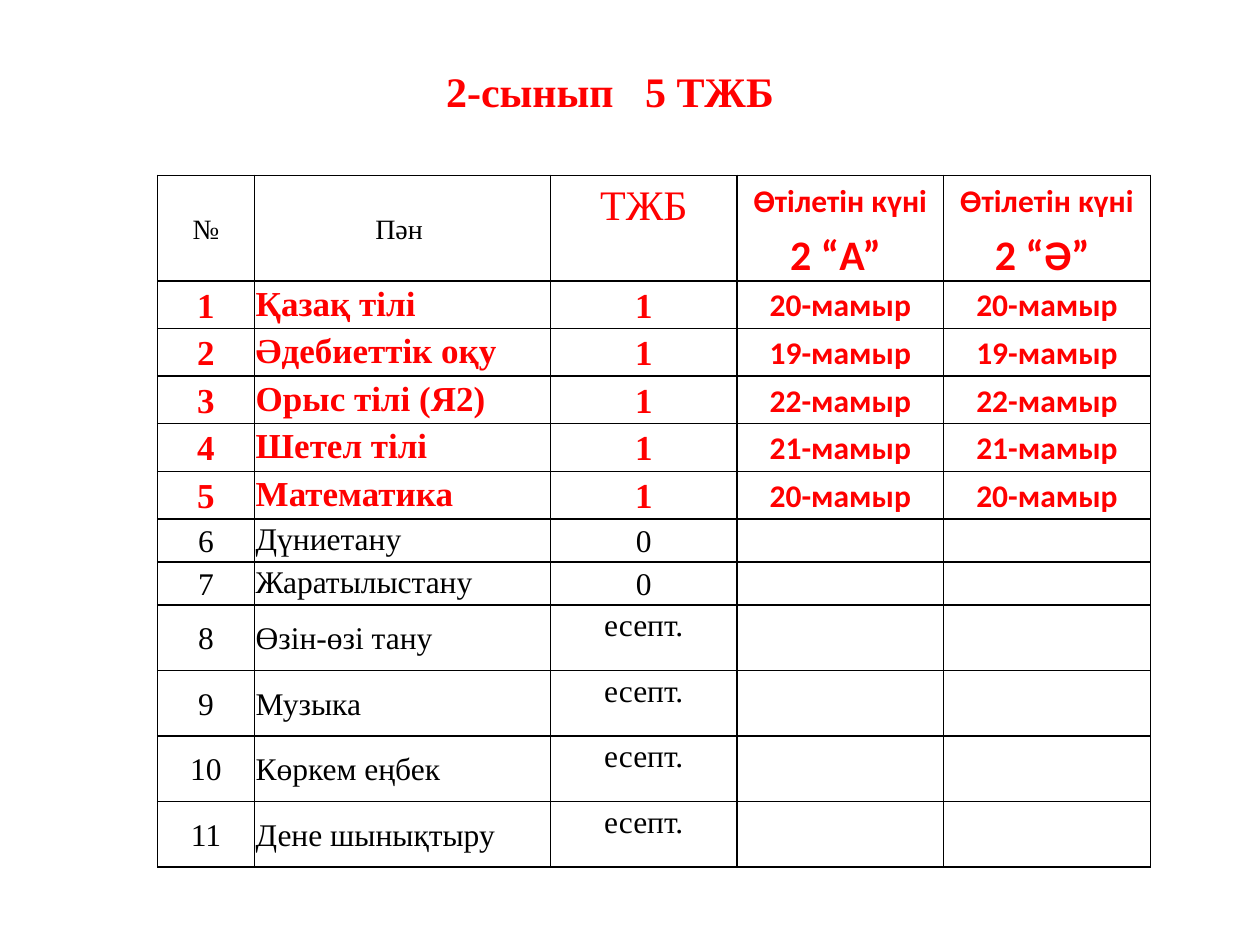
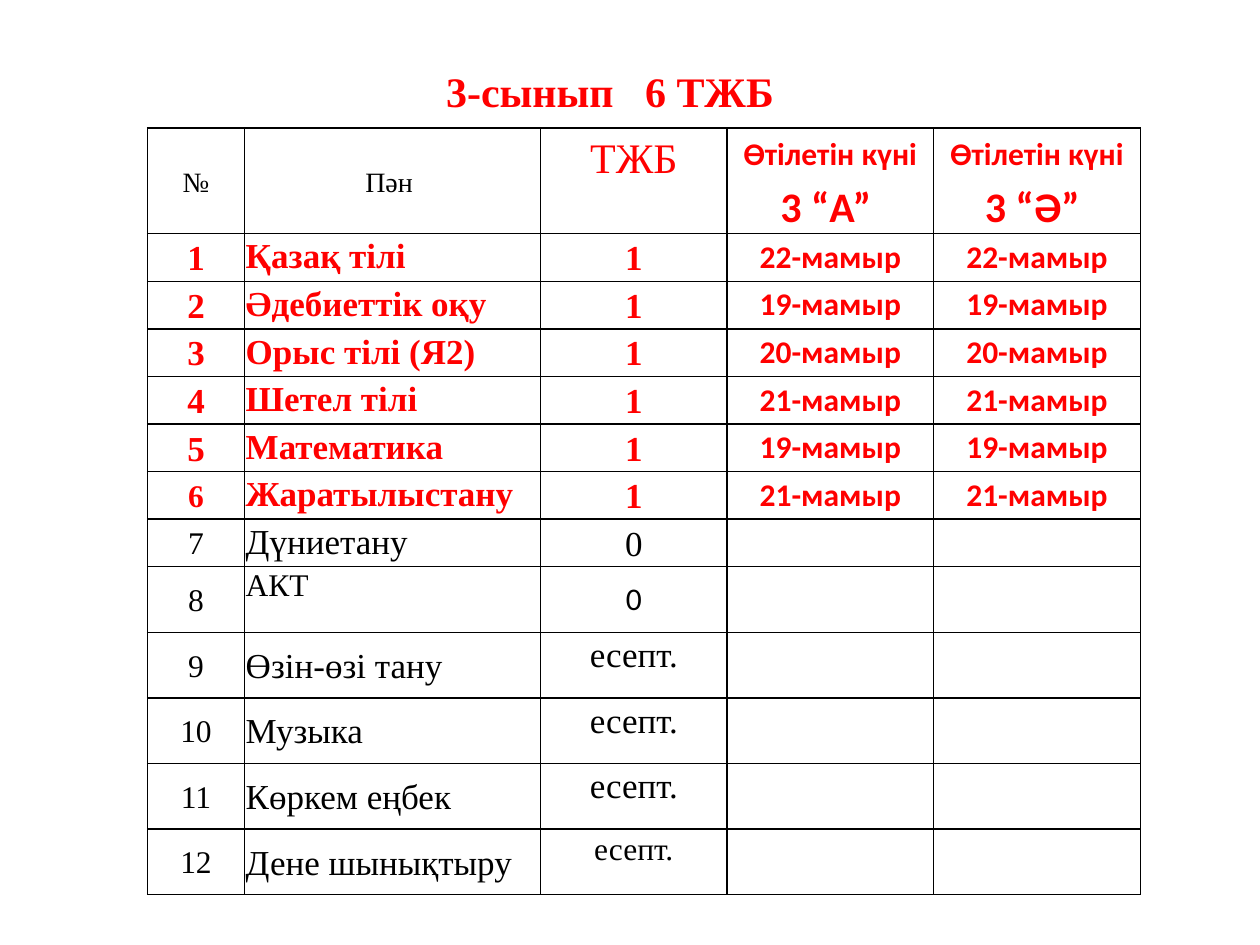
from dataclasses import dataclass, replace

from lxml import etree
from pptx import Presentation
from pptx.dml.color import RGBColor
from pptx.enum.text import MSO_ANCHOR, MSO_AUTO_SIZE, PP_ALIGN
from pptx.oxml.ns import qn
from pptx.util import Pt

LEFT, CENTER, BOTH = PP_ALIGN.LEFT, PP_ALIGN.CENTER, PP_ALIGN.JUSTIFY
TOP, MIDDLE = MSO_ANCHOR.TOP, MSO_ANCHOR.MIDDLE
NO_FIT, GROW = MSO_AUTO_SIZE.NONE, MSO_AUTO_SIZE.SHAPE_TO_FIT_TEXT
RED = RGBColor(0xFF, 0x00, 0x00)
BLACK = RGBColor(0x00, 0x00, 0x00)
SERIF, SANS = "Times New Roman", "Calibri"
INSET = Pt(0.72)
WIDTHS = (55.44, 169.2, 106.56, 118.08, 118.08)
HEAD, TALL, LARGE, SMALL = 60.3, 37.5, 27.2, 24.6
GROUPS = ("А", "Ә")
CREDIT = "есепт."


@dataclass(frozen=True)
class Look:
    """How the text of a cell is set."""
    size: float = 18
    font: str = SERIF
    color: RGBColor = BLACK
    bold: bool = False
    align: int = CENTER
    anchor: int = MIDDLE
    line: float = 1.07
    after: float = 0


@dataclass(frozen=True)
class Subject:
    """A school subject with its test mark, date and text sizes."""
    name: str
    mark: str
    day: str = ""
    sizes: tuple[int, int, int] = (18, 18, 18)
    short: bool = False

    @property
    def height(self) -> float:
        """Return the row height in points."""
        if self.mark == CREDIT or self.short:
            return TALL
        return LARGE if self.sizes[1] == 20 else SMALL


@dataclass(frozen=True)
class Grade:
    """A school year with its test table."""
    year: int
    tests: int
    left: float
    top: float
    line: float
    rows: tuple[Subject, ...]


BIG, MIXED, WIDE = (20, 20, 20), (18, 20, 20), (18, 20, 18)
GRADES = (
    Grade(2, 5, 90, 100.2, 1.07, (
        Subject("Қазақ тілі", "1", "20-мамыр", BIG),
        Subject("Әдебиеттік оқу", "1", "19-мамыр", BIG),
        Subject("Орыс тілі (Я2)", "1", "22-мамыр", BIG),
        Subject("Шетел тілі", "1", "21-мамыр", BIG),
        Subject("Математика", "1", "20-мамыр", BIG),
        Subject("Дүниетану", "0"),
        Subject("Жаратылыстану", "0"),
        Subject("Өзін-өзі тану", CREDIT),
        Subject("Музыка", CREDIT),
        Subject("Көркем еңбек", CREDIT),
        Subject("Дене шынықтыру", CREDIT),
    )),
    Grade(3, 6, 84.3, 73.2, 1.0, (
        Subject("Қазақ тілі", "1", "22-мамыр", BIG),
        Subject("Әдебиеттік оқу", "1", "19-мамыр", BIG),
        Subject("Орыс тілі (Я2)", "1", "20-мамыр", BIG),
        Subject("Шетел тілі", "1", "21-мамыр", BIG),
        Subject("Математика", "1", "19-мамыр", BIG),
        Subject("Жаратылыстану", "1", "21-мамыр", MIXED),
        Subject("Дүниетану", "0", "", MIXED),
        Subject("АКТ", "0", short=True),
        Subject("Өзін-өзі тану", CREDIT, "", MIXED),
        Subject("Музыка", CREDIT, "", MIXED),
        Subject("Көркем еңбек", CREDIT, "", MIXED),
        Subject("Дене шынықтыру", CREDIT, "", WIDE),
    )),
)


def style(para, look: Look) -> None:
    """Apply a look to a paragraph."""
    para.alignment = look.align
    para.line_spacing = look.line
    para.space_after = Pt(look.after)
    font = para.font
    font.name, font.size, font.bold = look.font, Pt(look.size), look.bold
    font.color.rgb = look.color


def frame(cell) -> None:
    """Give a cell thin black borders, no fill and tight margins."""
    cell.margin_left = cell.margin_right = INSET
    cell.margin_top = cell.margin_bottom = INSET
    props = cell._tc.get_or_add_tcPr()
    for side in ("a:lnL", "a:lnR", "a:lnT", "a:lnB"):
        line = etree.SubElement(props, qn(side), w=str(Pt(1)))
        fill = etree.SubElement(line, qn("a:solidFill"))
        etree.SubElement(fill, qn("a:srgbClr"), val=str(BLACK))
    cell.fill.background()


def write(cell, look: Look, *parts: tuple[str, float]) -> None:
    """Fill a cell with one paragraph for each text and size."""
    cell.vertical_anchor = look.anchor
    body = cell.text_frame
    for i, (text, size) in enumerate(parts):
        para = body.add_paragraph() if i else body.paragraphs[0]
        para.text = text
        style(para, replace(look, size=size))


def head(table, year: int) -> None:
    """Write the heading row."""
    base = Look(line=1.15, after=1)
    write(table.cell(0, 0), base, ("№", 16))
    write(table.cell(0, 1), base, ("Пән ", 16))
    top = replace(base, color=RED, anchor=TOP)
    write(table.cell(0, 2), top, ("ТЖБ", 24))
    date = replace(top, font=SANS, bold=True)
    for col, group in enumerate(GROUPS, 3):
        write(table.cell(0, col), date,
              ("Өтілетін күні", 18), (f"{year} “{group}” ", 24))


def fill_row(table, num: int, item: Subject, line: float) -> None:
    """Write the row of one subject."""
    base = Look(color=RED, bold=True) if item.day else Look()
    name = replace(base, align=LEFT, anchor=TOP)
    mark = base
    if item.mark == CREDIT:
        name = replace(base, align=BOTH)
        mark = replace(base, anchor=TOP, after=8)
    if item.short:
        name = replace(name, line=1.0)
        mark = replace(mark, font=SANS, line=1.0)
    texts = (str(num), item.name, item.mark)
    for col, (text, look, size) in enumerate(
            zip(texts, (base, name, mark), item.sizes)):
        write(table.cell(num, col), look, (text, size))
    date = replace(base, font=SANS, line=line)
    for col in range(3, 3 + len(GROUPS)):
        write(table.cell(num, col), date, (item.day, 18))


def add_title(slide, text: str) -> None:
    """Place and format the slide title."""
    title = slide.shapes.title
    title.left, title.top = Pt(247.7), Pt(33.8)
    title.width, title.height = Pt(210.2), Pt(36)
    body = title.text_frame
    body.text = text
    body.word_wrap = False
    body.auto_size = GROW
    body.vertical_anchor = TOP
    style(body.paragraphs[0],
          Look(size=24, color=RED, bold=True, align=LEFT, line=1.0))


def add_table(slide, grade: Grade) -> None:
    """Draw the test table of a grade."""
    heights = (HEAD, *(item.height for item in grade.rows))
    table = slide.shapes.add_table(
        len(heights), len(WIDTHS), Pt(grade.left), Pt(grade.top),
        Pt(sum(WIDTHS)), Pt(sum(heights))).table
    table.first_row = table.horz_banding = False
    for col, width in zip(table.columns, WIDTHS):
        col.width = Pt(width)
    for row, height in zip(table.rows, heights):
        row.height = Pt(height)
    for cell in table.iter_cells():
        frame(cell)
    head(table, grade.year)
    for num, item in enumerate(grade.rows, 1):
        fill_row(table, num, item, grade.line)


def main() -> None:
    """Build and save the slides."""
    deck = Presentation()
    deck.slide_width, deck.slide_height = Pt(720), Pt(540)
    for grade in GRADES:
        slide = deck.slides.add_slide(deck.slide_layouts[5])
        add_title(slide, f"{grade.year}-сынып   {grade.tests} ТЖБ")
        add_table(slide, grade)
    deck.save("out.pptx")


if __name__ == "__main__":
    main()
